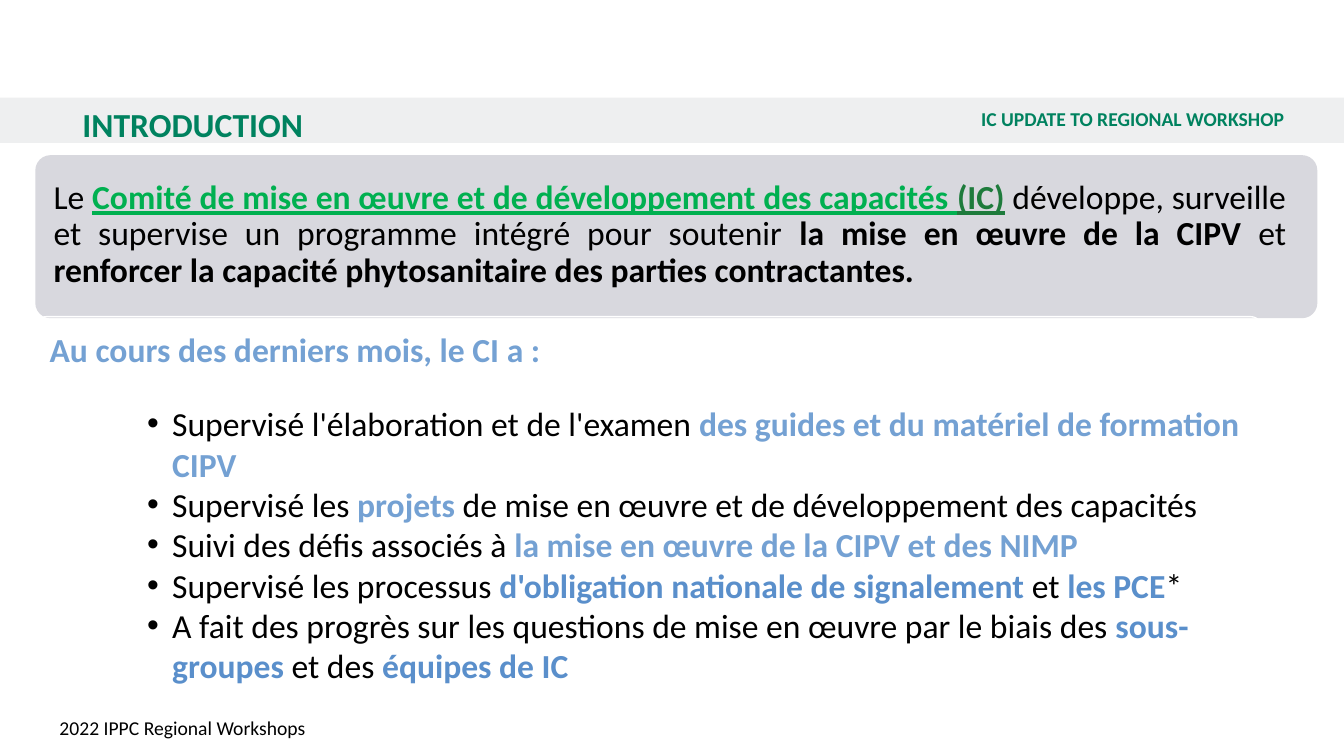
"""Build the introduction slide of the IC update to the regional workshop."""
from lxml import etree
from pptx import Presentation
from pptx.dml.color import RGBColor
from pptx.enum.shapes import MSO_SHAPE
from pptx.enum.text import MSO_ANCHOR, PP_ALIGN
from pptx.oxml.ns import qn
from pptx.util import Cm, Pt

RECTANGLE, ROUNDED = MSO_SHAPE.RECTANGLE, MSO_SHAPE.ROUNDED_RECTANGLE
TOP, MIDDLE = MSO_ANCHOR.TOP, MSO_ANCHOR.MIDDLE
LEFT, RIGHT, JUSTIFY = PP_ALIGN.LEFT, PP_ALIGN.RIGHT, PP_ALIGN.JUSTIFY

COLORS = {
    "black": "000000", "white": "FFFFFF", "band": "D8D9DC", "panel": "D8D8DE",
    "title": "00825F", "link": "00B050", "dark link": "1E7B3C",
    "light blue": "74A1D3", "blue": "5A8FCB",
}
WIDTH, HEIGHT = 33.87, 19.05
FONT = "Calibri"
BULLET_INDENT = 0.63

FOOTER = [[("2022 IPPC Regional Workshops", "black")]]
WORKSHOP = [[("IC UPDATE TO REGIONAL WORKSHOP", "title", "bold")]]
TITLE = [[("INTRODUCTION", "title", "bold")]]
MISSION = [[
    ("Le ", "black"),
    ("Comité de mise en œuvre et de développement des capacités ", "link", "bold underline"),
    ("(IC)", "dark link", "bold underline"),
    (" développe, surveille et supervise un programme intégré pour soutenir ", "black"),
    ("la mise en œuvre de la CIPV ", "black", "bold"),
    ("et ", "black"),
    ("renforcer la capacité phytosanitaire des parties contractantes.", "black", "bold"),
]]
HEADING = [[("Au cours des derniers mois, le CI a :", "light blue", "bold")]]
ACTIONS = [
    [("Supervisé l'élaboration et de l'examen ", "black"),
     ("des guides et du matériel de formation CIPV", "light blue", "bold")],
    [("Supervisé les ", "black"),
     ("projets ", "light blue", "bold"),
     ("de mise en œuvre et de développement des capacités", "black")],
    [("Suivi des défis associés à ", "black"),
     ("la mise en œuvre de la CIPV et des NIMP", "light blue", "bold")],
    [("Supervisé les processus ", "black"),
     ("d'obligation nationale de signalement ", "blue", "bold"),
     ("et ", "black"),
     ("les PCE", "blue", "bold"),
     ("*", "black")],
    [("A fait des progrès sur les questions de mise en œuvre par le biais des ", "black"),
     ("sous-groupes ", "blue", "bold"),
     ("et des ", "black"),
     ("équipes de IC", "blue", "bold")],
]


def rgb(name):
    """Return the named colour."""
    return RGBColor.from_string(COLORS[name])


def add_block(slide, box, kind, fill=None, opacity=None, line=None, corner=None):
    """Add a preset shape with optional fill, outline and corner radius."""
    shape = slide.shapes.add_shape(kind, *map(Cm, box))
    shape.shadow.inherit = False
    if corner is not None:
        shape.adjustments[0] = corner
    if fill:
        shape.fill.solid()
        shape.fill.fore_color.rgb = rgb(fill)
        if opacity:
            color = shape.fill._xPr.find(qn("a:solidFill"))[0]
            etree.SubElement(color, qn("a:alpha")).set("val", str(opacity * 1000))
    else:
        shape.fill.background()
    if line:
        shape.line.color.rgb = rgb(line)
        shape.line.width = Pt(1)
    else:
        shape.line.fill.background()
    return shape


def add_bullet(paragraph):
    """Give the paragraph a hanging round bullet."""
    properties = paragraph._p.get_or_add_pPr()
    properties.set("marL", str(Cm(BULLET_INDENT)))
    properties.set("indent", str(-Cm(BULLET_INDENT)))
    etree.SubElement(properties, qn("a:buFont")).set("typeface", "Arial")
    etree.SubElement(properties, qn("a:buChar")).set("char", "•")


def write(shape, paragraphs, size=24, insets=(0, 0, 0, 0), anchor=MIDDLE,
          align=LEFT, spacing=0.9, bullets=False):
    """Fill the shape with formatted paragraphs."""
    frame = shape.text_frame
    frame.word_wrap = True
    frame.vertical_anchor = anchor
    (frame.margin_left, frame.margin_top,
     frame.margin_right, frame.margin_bottom) = map(Cm, insets)
    for index, runs in enumerate(paragraphs):
        paragraph = frame.add_paragraph() if index else frame.paragraphs[0]
        paragraph.alignment = align
        paragraph.line_spacing = spacing
        if bullets:
            add_bullet(paragraph)
        for text, color, *style in runs:
            run = paragraph.add_run()
            run.text = text
            font = run.font
            font.name, font.size = FONT, Pt(size)
            font.color.rgb = rgb(color)
            font.bold = "bold" in "".join(style)
            font.underline = "underline" in "".join(style)


def add_text(slide, box, paragraphs, **style):
    """Add a text box with formatted paragraphs."""
    write(slide.shapes.add_textbox(*map(Cm, box)), paragraphs, **style)


def main():
    """Lay out the slide and save it."""
    presentation = Presentation()
    presentation.slide_width, presentation.slide_height = Cm(WIDTH), Cm(HEIGHT)
    slide = presentation.slides.add_slide(presentation.slide_layouts[6])

    strip_insets = (1.5, 0.13, 1.5, 0.13)
    add_text(slide, (0, 17.93, WIDTH, 0.89), FOOTER, size=14, insets=strip_insets)
    band = add_block(slide, (0, 2.46, WIDTH, 1.14), RECTANGLE, fill="band", opacity=42)
    write(band, WORKSHOP, size=14, insets=strip_insets, align=RIGHT)

    add_block(slide, (0.89, 3.91, 32.31, 4.11), ROUNDED, fill="panel", corner=0.094)
    add_text(slide, (0.89, 4.04, 31.98, 3.76), MISSION,
             insets=(0.46, 0.46, 0.46, 0.46), align=JUSTIFY)
    heading = add_block(slide, (0.89, 7.98, 30.91, 1.75), ROUNDED, line="white", corner=0.16)
    write(heading, HEADING, insets=(0.28, 0.28, 0.28, 0.28))
    add_text(slide, (2.72, 10.08, 29.74, 7.34), ACTIONS,
             insets=(0.99, 0.08, 0.48, 0.08), anchor=TOP, spacing=1.0, bullets=True)
    add_text(slide, (0.58, 2.74, 19.79, 0.81), TITLE,
             insets=(1.5, 0, 0.99, 0.13), anchor=TOP)
    presentation.save("out.pptx")


if __name__ == "__main__":
    main()
